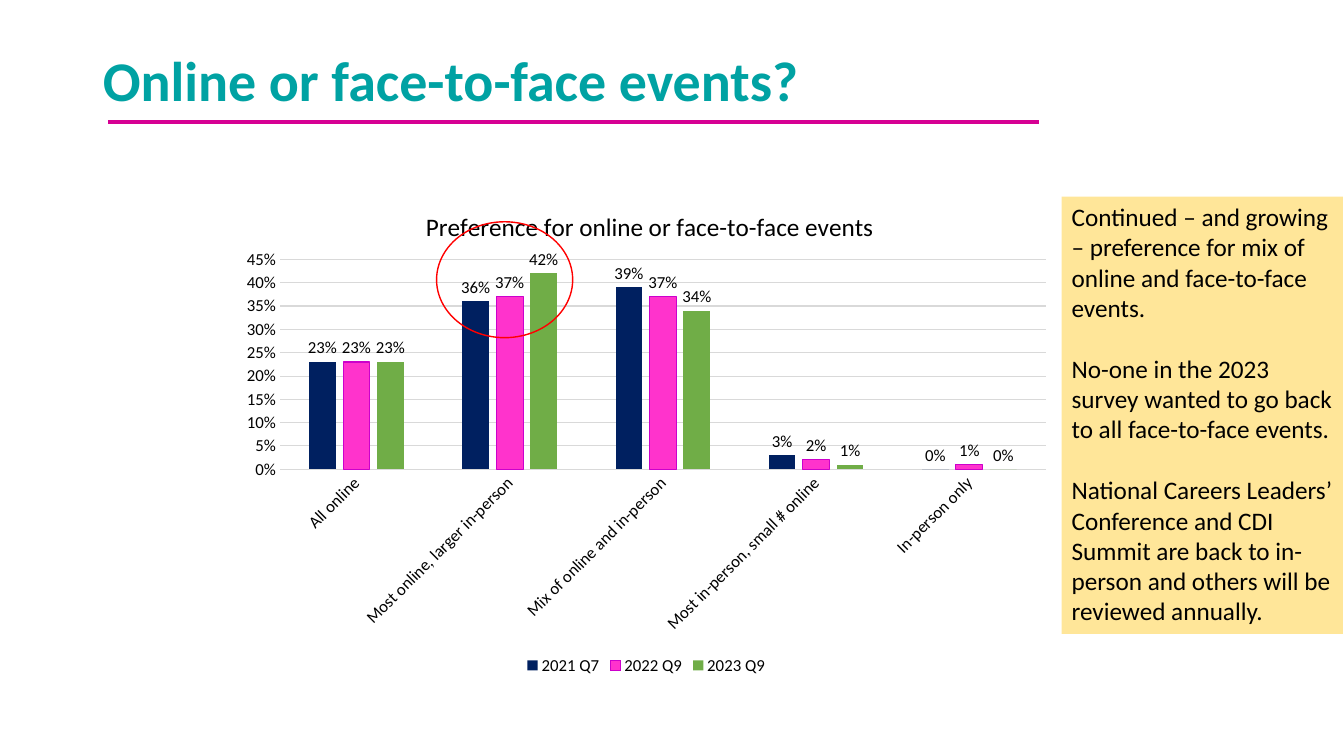
import pptx
import pptx.chart.data
import pptx.dml.color
import pptx.enum.chart
import pptx.enum.shapes
import pptx.enum.text
import pptx.oxml
import pptx.oxml.ns
import pptx.util

PX = 9144  # 100 px to the inch
FONT = "Calibri"
COLOURS = {
    "title": "00A2A3", "rule": "D60093", "text": "000000", "grid": "D9D9D9",
    "ring": "FF0000", "note": "FFE699", "navy": "002060", "pink": "FF33CC",
    "pink edge": "CC00CC", "green": "70AD47",
}
CATEGORIES = ["All online", "Most online, larger in-person",
              "Mix of online and in-person", "Most in-person, small # online",
              "In-person only"]
SERIES = [  # name, values, fill, outline
    ("2021 Q7", (0.23, 0.36, 0.39, 0.03, 0), "navy", None),
    ("2022 Q9", (0.23, 0.37, 0.37, 0.02, 0.01), "pink", "pink edge"),
    ("2023 Q9", (0.23, 0.42, 0.34, 0.01, 0), "green", None),
]
NOTES = [
    "Continued – and growing – preference for mix of online and face-to-face events.",
    "No-one in the 2023 survey wanted to go back to all face-to-face events.",
    "National Careers Leaders’ Conference and CDI Summit are back to in-person "
    "and others will be reviewed annually.",
]


def scale(*lengths):
    return [pptx.util.Emu(length * PX) for length in lengths]


def colour(name):
    return pptx.dml.color.RGBColor.from_string(COLOURS[name])


def set_values(target, values):
    for name, value in values.items():
        setattr(target, name, value)


def set_font(font, size, name="text", bold=False):
    set_values(font, {"name": FONT, "size": pptx.util.Pt(size), "bold": bold})
    font.color.rgb = colour(name)


def set_line(line, name, width):
    line.color.rgb = colour(name)
    line.width = pptx.util.Pt(width)


def set_layout(element, index, **fractions):
    """Place a chart part by fractions of the chart's size."""
    for layout in element.findall(pptx.oxml.ns.qn("c:layout")):
        element.remove(layout)
    parts = "".join(f'<c:{key} val="{value}"/>' for key, value in fractions.items())
    element.insert(index, pptx.oxml.parse_xml(
        f'<c:layout {pptx.oxml.ns.nsdecls("c")}><c:manualLayout>{parts}'
        '</c:manualLayout></c:layout>'))


def add_heading(slide, left, top, width, height):
    # Title
    title = slide.shapes.title
    set_values(title, dict(zip(("left", "top", "width", "height"),
                               scale(left, top, width, height))))
    frame = title.text_frame
    frame.text = "Online or face-to-face events?"
    set_values(frame, {"auto_size": pptx.enum.text.MSO_AUTO_SIZE.NONE,
                       "vertical_anchor": pptx.enum.text.MSO_ANCHOR.MIDDLE})
    paragraph = frame.paragraphs[0]
    set_values(paragraph, {"alignment": pptx.enum.text.PP_ALIGN.LEFT,
                           "line_spacing": 0.9})
    set_font(paragraph.font, 40, "title", True)

    # Rule under the title
    rule = slide.shapes.add_connector(
        pptx.enum.shapes.MSO_CONNECTOR.STRAIGHT,
        *scale(left + 15, top + 99, left + 938, top + 99))
    set_line(rule.line, "rule", 3)
    rule._element.spPr.append(pptx.oxml.parse_xml(
        f'<a:effectLst {pptx.oxml.ns.nsdecls("a")}/>'))


def format_axes(chart):
    no_ticks = pptx.enum.chart.XL_TICK_MARK.NONE
    for axis in (chart.category_axis, chart.value_axis):
        set_values(axis, {"major_tick_mark": no_ticks, "minor_tick_mark": no_ticks})
        set_font(axis.tick_labels.font, 12)
    set_line(chart.category_axis.format.line, "grid", 0.75)
    for body in chart.category_axis._element.xpath("c:txPr/a:bodyPr"):
        body.set("rot", "-2700000")
        body.set("vert", "horz")
    value_axis = chart.value_axis
    set_values(value_axis, {"minimum_scale": 0, "maximum_scale": 0.45,
                            "major_unit": 0.05, "has_major_gridlines": True})
    value_axis.format.line.fill.background()
    set_line(value_axis.major_gridlines.format.line, "grid", 0.75)
    set_values(value_axis.tick_labels, {"number_format": "0%",
                                        "number_format_is_linked": False})


def add_preference_chart(slide, left, top, width, height):
    data = pptx.chart.data.CategoryChartData(number_format="0%")
    data.categories = CATEGORIES
    for name, values, *_ in SERIES:
        data.add_series(name, values)
    chart = slide.shapes.add_chart(
        pptx.enum.chart.XL_CHART_TYPE.COLUMN_CLUSTERED,
        *scale(left, top, width, height), data).chart
    set_font(chart.font, 12)

    # Chart title and plot area
    chart.has_title = True
    frame = chart.chart_title.text_frame
    frame.text = "Preference for online or face-to-face events"
    set_font(frame.paragraphs[0].runs[0].font, 18)
    set_layout(chart.chart_title._element, 1, xMode="edge", yMode="edge", x=0.23, y=0.05)
    set_layout(chart._chartSpace.chart.plotArea, 0, layoutTarget="inner",
               xMode="edge", yMode="edge", x=0.06, y=0.16, w=0.92, h=0.42)
    format_axes(chart)

    # Columns and their labels
    plot = chart.plots[0]
    set_values(plot, {"gap_width": 219, "overlap": -27, "vary_by_categories": False})
    for series, (_, _, fill, outline) in zip(plot.series, SERIES):
        series.format.fill.solid()
        series.format.fill.fore_color.rgb = colour(fill)
        if outline:
            set_line(series.format.line, outline, 0.75)
        labels = series.data_labels
        set_values(labels, {
            "show_value": True, "number_format": "0%", "number_format_is_linked": False,
            "position": pptx.enum.chart.XL_LABEL_POSITION.OUTSIDE_END})
        set_font(labels.font, 12)

    # Legend
    chart.has_legend = True
    set_values(chart.legend, {"position": pptx.enum.chart.XL_LEGEND_POSITION.BOTTOM,
                              "include_in_layout": False})
    set_font(chart.legend.font, 12)

    # Ring around the growing group
    ring = slide.shapes.add_shape(pptx.enum.shapes.MSO_SHAPE.OVAL,
                                  *scale(left + 205, top + 42, 135, 115))
    ring.shadow.inherit = False
    ring.fill.background()
    set_line(ring.line, "ring", 1)


def add_note(slide, left, top, width, height):
    note = slide.shapes.add_textbox(*scale(left, top, width, height))
    note.fill.solid()
    note.fill.fore_color.rgb = colour("note")
    frame = note.text_frame
    set_values(frame, {"word_wrap": True,
                       "auto_size": pptx.enum.text.MSO_AUTO_SIZE.SHAPE_TO_FIT_TEXT})
    for index, text in enumerate(NOTES):
        paragraph = frame.add_paragraph() if index else frame.paragraphs[0]
        paragraph.text = text
        if index:
            paragraph.space_before = pptx.util.Pt(22)
        set_font(paragraph.font, 18)


def main():
    presentation = pptx.Presentation()
    presentation.slide_width, presentation.slide_height = scale(1333, 750)
    slide = presentation.slides.add_slide(presentation.slide_layouts[5])
    add_heading(slide, 92, 22, 1150, 121)
    add_preference_chart(slide, 228, 178, 826, 496)
    add_note(slide, 1053, 195, 279, 434)
    presentation.save("out.pptx")


if __name__ == "__main__":
    main()
